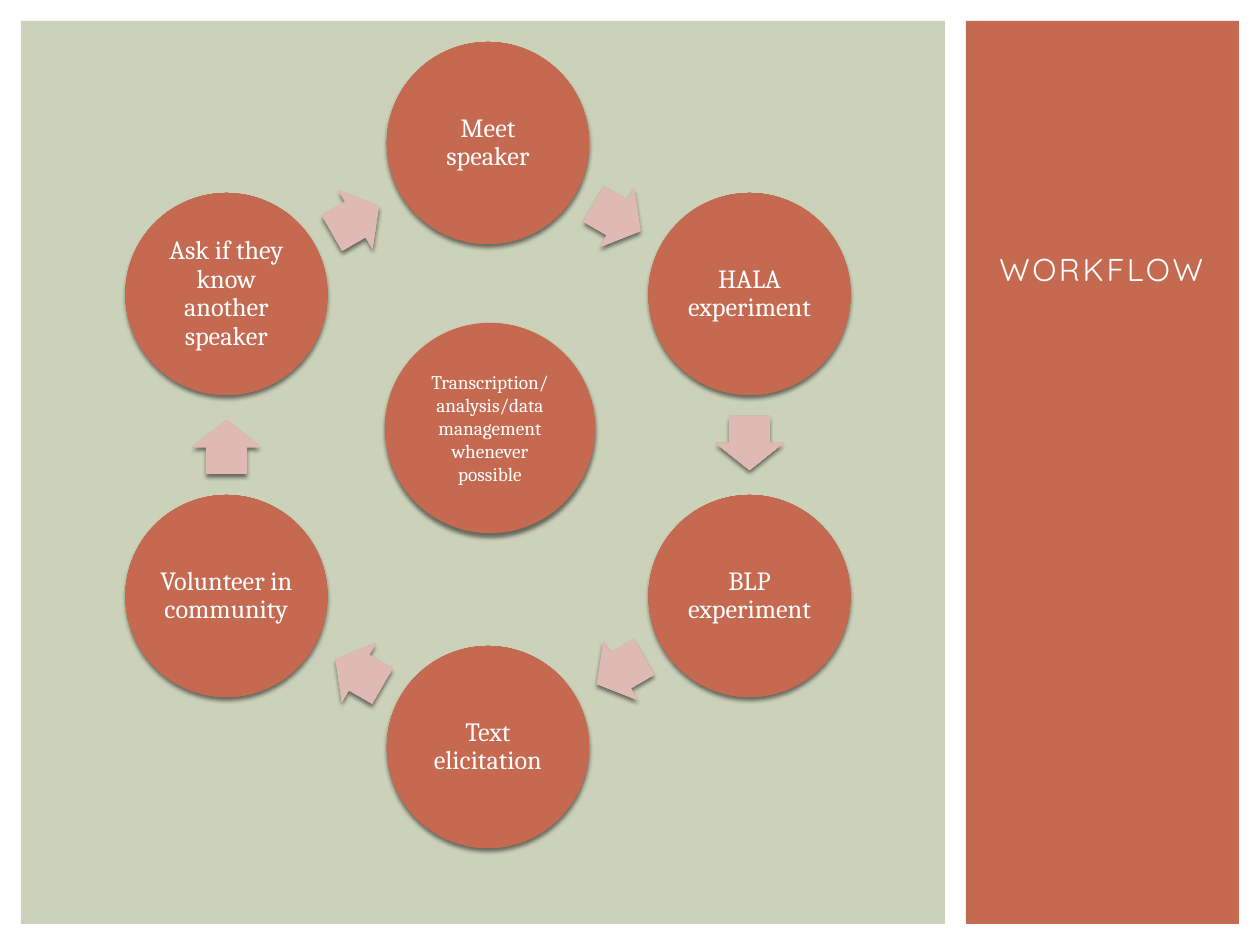
from dataclasses import dataclass
from math import cos, radians, sin

from lxml import etree
from pptx import Presentation
from pptx.dml.color import RGBColor
from pptx.enum.shapes import MSO_SHAPE
from pptx.enum.text import MSO_ANCHOR, PP_ALIGN
from pptx.oxml import parse_xml
from pptx.oxml.ns import nsdecls, qn
from pptx.util import Pt

RECTANGLE, OVAL, ARROW = MSO_SHAPE.RECTANGLE, MSO_SHAPE.OVAL, MSO_SHAPE.RIGHT_ARROW
MIDDLE, BOTTOM = MSO_ANCHOR.MIDDLE, MSO_ANCHOR.BOTTOM
CENTER, LEFT = PP_ALIGN.CENTER, PP_ALIGN.LEFT

EMU_PER_PX = 914400 / 126
SLIDE_WIDTH, SLIDE_HEIGHT = 1260, 945

WHITE, SAGE = "FFFFFF", "CCD1B9"
RUST, RUST_EDGE = "C66951", "B8624B"
PINK, PINK_EDGE = "DFB9B3", "D0ACA7"

RING_X, RING_Y, RING_RADIUS = 488, 445, 302
ARROW_LENGTH, ARROW_WIDTH, ARROW_SETBACK = 54, 68, 2
STEPS = [
    "Meet speaker",
    "HALA experiment",
    "BLP experiment",
    "Text elicitation",
    "Volunteer in community",
    "Ask if they know another speaker",
]


@dataclass
class Box:
    left: float
    top: float
    width: int
    height: int


@dataclass
class Circle:
    text: str
    x: float
    y: float
    diameter: int = 202
    size: int = 15
    line_spacing: float = 0.9
    inset_x: int = 2
    inset_y: int = 2


def px(value):
    return round(value * EMU_PER_PX)


def color(value: str) -> RGBColor:
    return RGBColor.from_string(value)


def centered_box(x: float, y: float, width: int, height: int) -> Box:
    return Box(x - width / 2, y - height / 2, width, height)


def place(box: Box) -> list[int]:
    return [px(value) for value in (box.left, box.top, box.width, box.height)]


def add_plain_shape(slide, kind, box: Box, fill: str):
    shape = slide.shapes.add_shape(kind, *place(box))
    shape.shadow.inherit = False
    shape.fill.solid()
    shape.fill.fore_color.rgb = color(fill)
    shape.line.fill.background()
    return shape


def add_raised_shape(slide, kind, box: Box, fill: str, edge: str):
    """Add a shape with a radial gradient and a soft shadow below it."""
    shape = add_plain_shape(slide, kind, box, fill)
    properties = shape.fill._xPr
    stops = "".join(
        f'<a:gs pos="{position}"><a:srgbClr val="{value}"/></a:gs>'
        for position, value in ((0, fill), (90000, fill), (100000, edge))
    )
    gradient = parse_xml(
        f'<a:gradFill {nsdecls("a")} rotWithShape="1"><a:gsLst>{stops}</a:gsLst>'
        '<a:path path="circle"><a:fillToRect l="100000" t="100000" r="100000" b="100000"/>'
        "</a:path></a:gradFill>"
    )
    properties.replace(properties.find(qn("a:solidFill")), gradient)
    shadow = etree.SubElement(
        properties.find(qn("a:effectLst")), qn("a:outerShdw"),
        blurRad=str(Pt(2.5)), dist=str(Pt(2)), dir="5400000", rotWithShape="0",
    )
    black = etree.SubElement(shadow, qn("a:srgbClr"), val="000000")
    etree.SubElement(black, qn("a:alpha"), val="50000")
    return shape


def write_text(shape, text: str, font: dict, frame: dict, paragraph_format: dict):
    text_frame = shape.text_frame
    paragraph = text_frame.paragraphs[0]
    run = paragraph.add_run()
    run.text = text
    run.font.color.rgb = color(WHITE)
    for target, values in (
        (run.font, font), (text_frame, frame), (paragraph, paragraph_format)
    ):
        for name, value in values.items():
            setattr(target, name, value)
    return run


def add_circle(slide, circle: Circle):
    box = centered_box(circle.x, circle.y, circle.diameter, circle.diameter)
    shape = add_raised_shape(slide, OVAL, box, RUST, RUST_EDGE)
    frame = {
        "word_wrap": True,
        "vertical_anchor": MIDDLE,
        "margin_left": px(circle.inset_x),
        "margin_right": px(circle.inset_x),
        "margin_top": px(circle.inset_y),
        "margin_bottom": px(circle.inset_y),
    }
    write_text(
        shape, circle.text, {"name": "Cambria", "size": Pt(circle.size)}, frame,
        {"alignment": CENTER, "line_spacing": circle.line_spacing},
    )
    return shape


def add_arrow(slide, start: Circle, end: Circle, rotation: float):
    """Add an arrow just short of halfway between two circles."""
    x = (start.x + end.x) / 2 - ARROW_SETBACK * cos(radians(rotation))
    y = (start.y + end.y) / 2 - ARROW_SETBACK * sin(radians(rotation))
    box = centered_box(x, y, ARROW_LENGTH, ARROW_WIDTH)
    shape = add_raised_shape(slide, ARROW, box, PINK, PINK_EDGE)
    shape.adjustments[0] = 0.6
    shape.adjustments[1] = 0.5
    shape.rotation = rotation


def add_cycle(slide):
    turn = 360 / len(STEPS)
    circles = []
    for index, text in enumerate(STEPS):
        angle = radians(index * turn - 90)
        circles.append(
            Circle(text, RING_X + RING_RADIUS * cos(angle), RING_Y + RING_RADIUS * sin(angle))
        )
    for index, circle in enumerate(circles):
        add_circle(slide, circle)
        following = circles[(index + 1) % len(circles)]
        add_arrow(slide, circle, following, turn / 2 + index * turn)


def add_title(slide):
    title = slide.shapes.add_textbox(*place(Box(987, 63, 231, 231)))
    run = write_text(
        title, "WORKFLOW", {"name": "Quicksand", "size": Pt(18)},
        {"word_wrap": True, "vertical_anchor": BOTTOM}, {"alignment": LEFT},
    )
    run.font._element.set("spc", "150")


def main():
    presentation = Presentation()
    presentation.slide_width = px(SLIDE_WIDTH)
    presentation.slide_height = px(SLIDE_HEIGHT)
    slide = presentation.slides.add_slide(presentation.slide_layouts[6])
    slide.background.fill.solid()
    slide.background.fill.fore_color.rgb = color(WHITE)

    add_plain_shape(slide, RECTANGLE, Box(966, 21, 273, 903), RUST)
    add_plain_shape(slide, RECTANGLE, Box(21, 21, 924, 903), SAGE)
    add_cycle(slide)
    add_title(slide)

    hub = add_circle(slide, Circle(
        "Transcription/analysis/data management whenever possible",
        490, 428, diameter=209, size=11, line_spacing=1.0, inset_x=13, inset_y=6,
    ))
    hub.line.color.rgb = color(RUST)
    hub.line.width = Pt(0.79)

    presentation.save("out.pptx")


if __name__ == "__main__":
    main()
